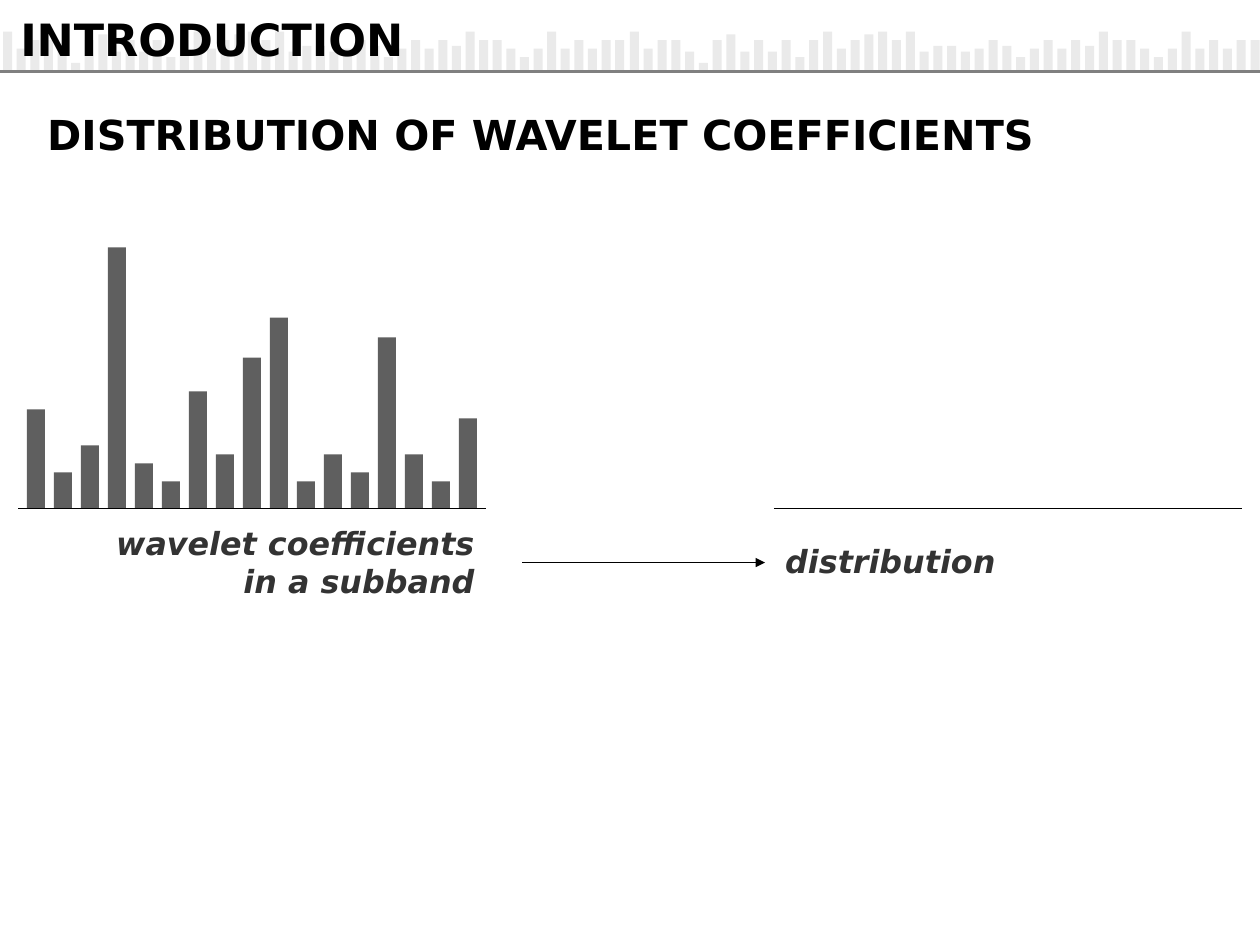
from lxml.etree import SubElement
from pptx import Presentation
from pptx.dml.color import RGBColor
from pptx.enum.shapes import MSO_CONNECTOR, MSO_SHAPE
from pptx.enum.text import MSO_ANCHOR, MSO_AUTO_SIZE, PP_ALIGN
from pptx.oxml.ns import qn
from pptx.util import Cm, Pt

COLOURS = {
    "heading": "000000",
    "caption": "333333",
    "coefficient": "5F5F5F",
    "band": "EAEAEA",
    "rule": "808080",
    "axis": "000000",
}
FORMATS = {
    "title": {"size": Pt(28), "bold": True, "italic": False},
    "subtitle": {"size": Pt(26), "bold": True, "italic": False},
    "caption": {"size": Pt(20), "bold": True, "italic": True},
}
FRAME = {
    "word_wrap": True,
    "auto_size": MSO_AUTO_SIZE.NONE,
    "vertical_anchor": MSO_ANCHOR.TOP,
    "margin_left": Cm(0.25),
    "margin_right": Cm(0.25),
    "margin_top": Cm(0.13),
    "margin_bottom": Cm(0.13),
}
BAND_UNIT = 2.54 / 40
BAND_HEIGHTS = [
    14, 8, 11, 11, 7, 3, 11, 13, 7, 11, 7, 11, 5, 11, 14, 8, 11, 13, 14, 11, 14, 7, 9,
    9, 7, 8, 11, 9, 5, 8, 11, 8, 11, 9, 14, 11, 11, 8, 5, 8, 14, 8, 11, 8, 11, 11,
]
BAND_SPANS = [(0.07, 13.67), (14, 27.79)]
COEFFICIENTS = [
    2.2, 0.8, 1.4, 5.8, 1, 0.6, 2.6, 1.2, 3.35, 4.24, 0.6, 1.2, 0.8, 3.8, 1.2, 0.6, 2,
]
BASELINE = 11.3


class SlideBuilder:
    """Holds the style and the current slide and adds each kind of element."""

    def __init__(self, slide, font="DejaVu Sans"):
        self.slide = slide
        self.font = font

    def colour(self, role):
        return RGBColor.from_string(COLOURS[role])

    def bars(self, heights, left, pitch, width, bottom, role):
        for index, height in enumerate(heights):
            bar = self.slide.shapes.add_shape(
                MSO_SHAPE.ROUNDED_RECTANGLE,
                Cm(left + index * pitch), Cm(bottom - height), Cm(width), Cm(height),
            )
            bar.adjustments[0] = 0.005
            bar.shadow.inherit = False
            bar.fill.solid()
            bar.fill.fore_color.rgb = self.colour(role)
            bar.line.fill.background()

    def line(self, start, end, y, role, weight=0.75, arrow=False):
        line = self.slide.shapes.add_connector(
            MSO_CONNECTOR.STRAIGHT, Cm(start), Cm(y), Cm(end), Cm(y)
        )
        line.line.color.rgb = self.colour(role)
        line.line.width = Pt(weight)
        properties = line._element.spPr
        if arrow:
            SubElement(properties.find(qn("a:ln")), qn("a:tailEnd"), type="triangle")
        SubElement(properties, qn("a:effectLst"))

    def fill_frame(self, frame, lines, style, role, align):
        for name, value in FRAME.items():
            setattr(frame, name, value)
        frame.text = "\n".join(lines)
        for paragraph in frame.paragraphs:
            paragraph.alignment = align
            paragraph.line_spacing = 1.01
            font = paragraph.runs[0].font
            for name, value in {"name": self.font, **FORMATS[style]}.items():
                setattr(font, name, value)
            font.color.rgb = self.colour(role)

    def title(self, text, left, top, width, height):
        title = self.slide.shapes.title
        place = {"left": left, "top": top, "width": width, "height": height}
        for name, value in place.items():
            setattr(title, name, Cm(value))
        self.fill_frame(title.text_frame, [text], "title", "heading", PP_ALIGN.LEFT)
        self.slide.shapes._spTree.append(title._element)

    def text(self, lines, left, top, width, height, style, role, align=PP_ALIGN.LEFT):
        box = self.slide.shapes.add_textbox(Cm(left), Cm(top), Cm(width), Cm(height))
        self.fill_frame(box.text_frame, lines, style, role, align)


def main():
    presentation = Presentation()
    presentation.slide_width = Cm(28)
    presentation.slide_height = Cm(21)
    builder = SlideBuilder(presentation.slides.add_slide(presentation.slide_layouts[5]))

    band = [units * BAND_UNIT for units in BAND_HEIGHTS]
    for first, last in BAND_SPANS:
        pitch = (last - first) / (len(band) - 1)
        builder.bars(band, first, pitch, 0.2, 1.59, "band")
    builder.line(0, 28, 1.59, "rule", weight=1.5)
    builder.title("INTRODUCTION", 0.2, 0.13, 19.2, 1.45)
    builder.text(["DISTRIBUTION OF WAVELET COEFFICIENTS"], 0.8, 2.29, 26.8, 1.38,
                 "subtitle", "heading")

    builder.bars(COEFFICIENTS, 0.6, 0.6, 0.4, BASELINE, "coefficient")
    builder.text(["wavelet coefficients", "in a subband"], 1.4, 11.5, 9.4, 1.95,
                 "caption", "caption", PP_ALIGN.RIGHT)
    builder.line(0.4, 10.8, BASELINE, "axis")
    builder.line(11.6, 17, 12.5, "axis", arrow=True)
    builder.text(["distribution"], 17.2, 11.9, 9.4, 1.1, "caption", "caption")
    builder.line(17.2, 27.6, BASELINE, "axis")

    presentation.save("out.pptx")


if __name__ == "__main__":
    main()
